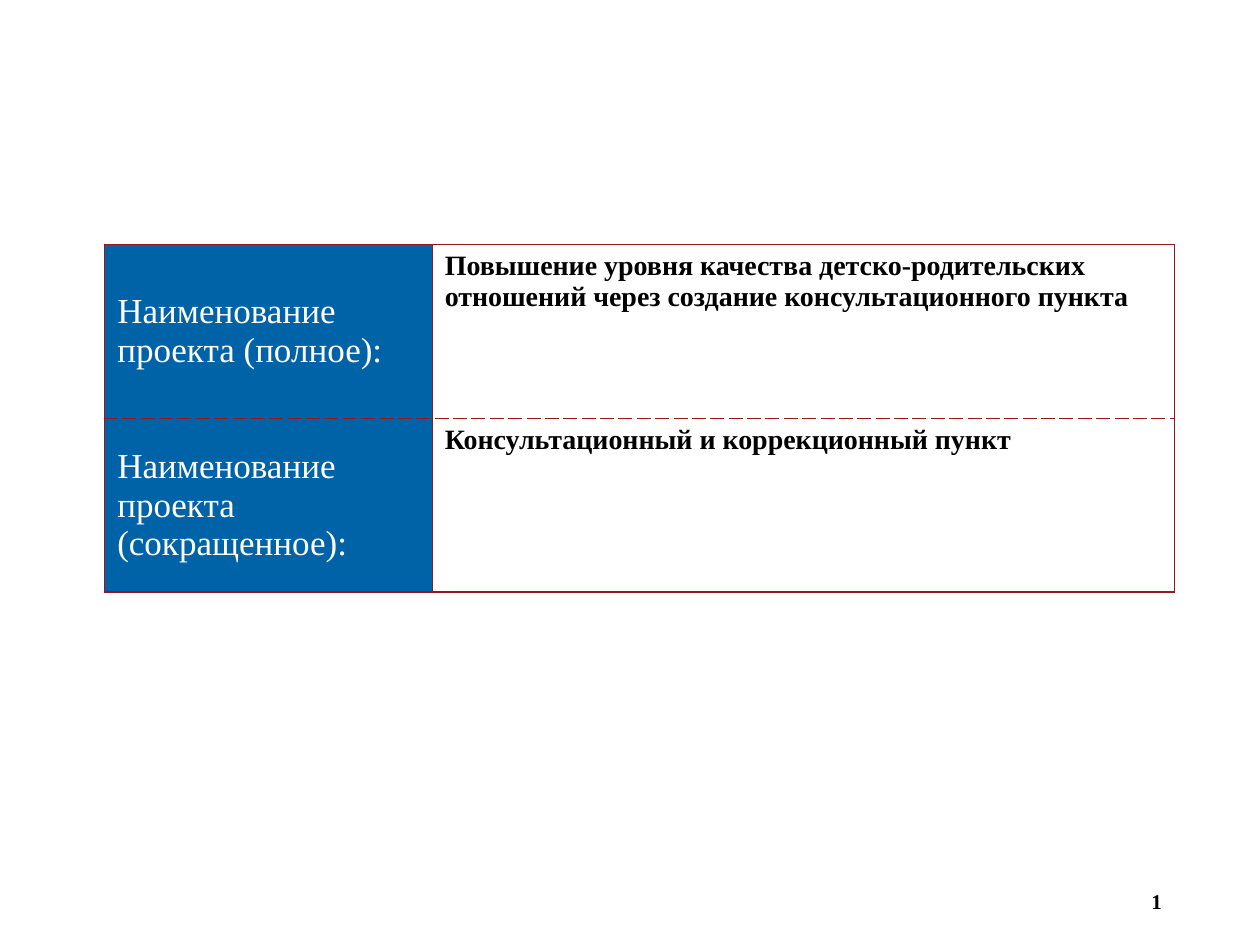
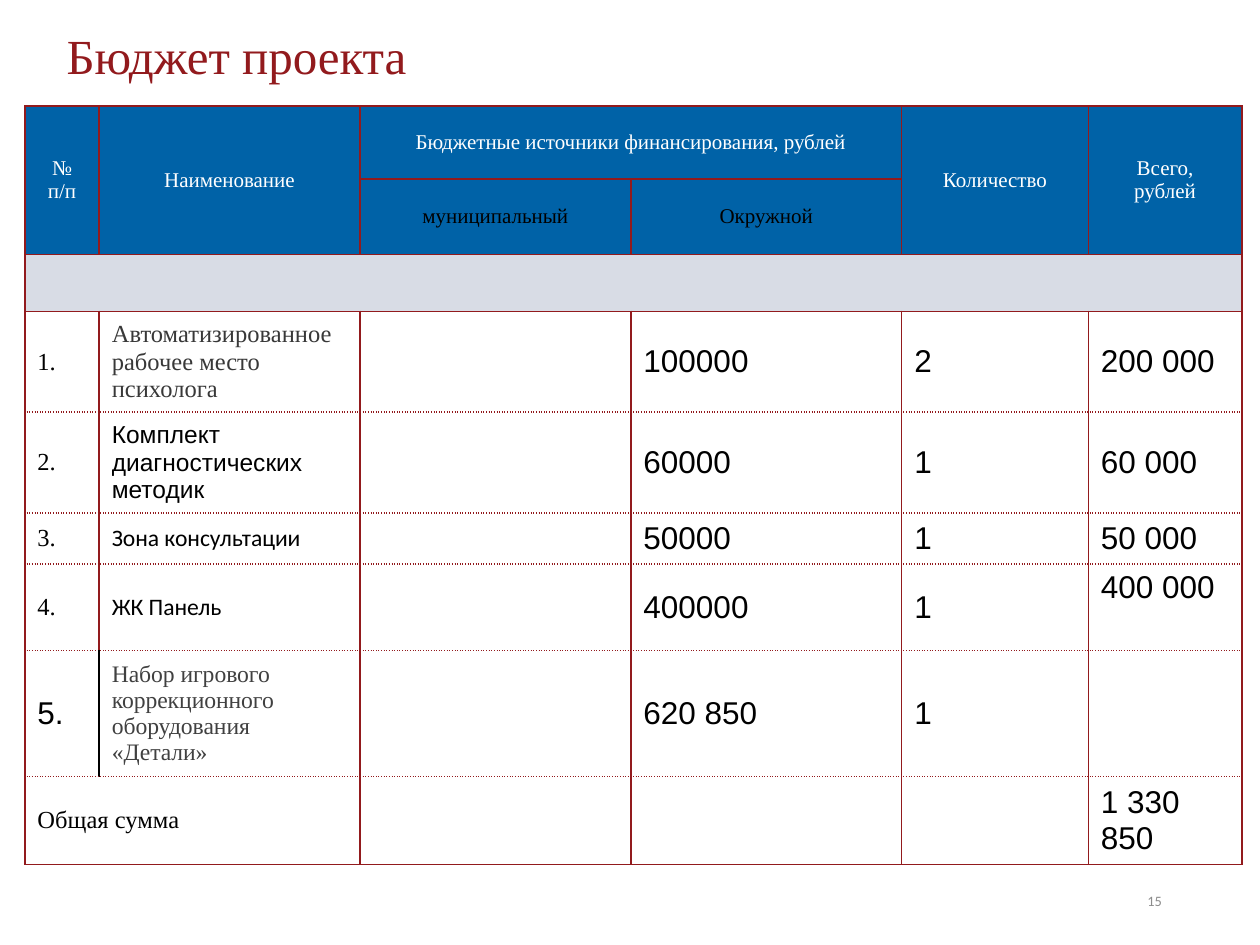
"""Build two project slides: the project names and the project budget."""
import pptx
import pptx.dml.color
import pptx.enum.text
import pptx.oxml
import pptx.oxml.ns
import pptx.util

Pt = pptx.util.Pt
ALIGN = pptx.enum.text.PP_ALIGN
ANCHOR = pptx.enum.text.MSO_ANCHOR
COLORS = {
    "blue": "0062A7", "red": "921A1D", "white": "FFFFFF", "black": "000000",
    "band": "D8DCE5", "dark": "383838", "charcoal": "404040", "gray": "8C8C8C",
}
SERIF, SANS, CALIBRI = "Times New Roman", "Arial", "Calibri"


def write_text(frame, text, font=SERIF, size=18, color="black", bold=False, align=ALIGN.LEFT, spacing=0):
    frame.word_wrap = True
    frame.text = text
    for paragraph in frame.paragraphs:
        paragraph.alignment = align
        paragraph.space_before = paragraph.space_after = Pt(spacing)
        paragraph.font.name = font
        paragraph.font.size = Pt(size)
        paragraph.font.bold = bold
        paragraph.font.color.rgb = pptx.dml.color.RGBColor.from_string(COLORS[color])


def style_cell(cell, fill, top, bottom, left_color="red", right_color="red"):
    cell.fill.solid()
    cell.fill.fore_color.rgb = pptx.dml.color.RGBColor.from_string(COLORS[fill])
    properties = cell._tc.get_or_add_tcPr()
    borders = [("L", left_color, "solid"), ("R", right_color, "solid"), ("T", "red", top), ("B", "red", bottom)]
    for index, (side, color, dash) in enumerate(borders):
        properties.insert(index, pptx.oxml.parse_xml(
            f'<a:ln{side} {pptx.oxml.ns.nsdecls("a")} w="12700"><a:solidFill><a:srgbClr val="{COLORS[color]}"/>'
            f'</a:solidFill><a:prstDash val="{dash}"/></a:ln{side}>'))


presentation = pptx.Presentation()
presentation.slide_width, presentation.slide_height = Pt(720), Pt(540)
page_numbers = [
    ("1", {"size": 12, "bold": True}),
    ("15", {"font": CALIBRI, "size": 8.2, "color": "gray"}),
]
for number, style in page_numbers:
    slide = presentation.slides.add_slide(presentation.slide_layouts[6])
    frame = slide.shapes.add_textbox(Pt(509), Pt(500.4), Pt(162), Pt(28.8)).text_frame
    frame.vertical_anchor = ANCHOR.MIDDLE
    write_text(frame, number, align=ALIGN.RIGHT, **style)
names_slide, budget_slide = presentation.slides

names = [
    ("Наименование проекта (полное):",
     "Повышение уровня качества детско-родительских отношений через создание консультационного пункта"),
    ("Наименование проекта (сокращенное):", "Консультационный и коррекционный пункт"),
]
names_table = names_slide.shapes.add_table(2, 2, Pt(59.8), Pt(139.7), Pt(611.3), Pt(198.7)).table
for column, width in zip(names_table.columns, (187.2, 424.1)):
    column.width = Pt(width)
name_lines = ["solid", "sysDash", "solid"]
for row, (label, name) in enumerate(names):
    label_cell, name_cell = names_table.cell(row, 0), names_table.cell(row, 1)
    write_text(label_cell.text_frame, label, size=20, color="white", spacing=12)
    label_cell.vertical_anchor = ANCHOR.MIDDLE
    write_text(name_cell.text_frame, name, size=16, bold=True)
    style_cell(label_cell, "blue", name_lines[row], name_lines[row + 1])
    style_cell(name_cell, "white", name_lines[row], name_lines[row + 1])

title_frame = budget_slide.shapes.add_textbox(Pt(31), Pt(-2.2), Pt(306.7), Pt(71.3)).text_frame
title_frame.vertical_anchor = ANCHOR.MIDDLE
write_text(title_frame, "Бюджет проекта", size=28, color="red")
title_frame.paragraphs[0].line_spacing = 0.9

column_widths = [42.5, 149, 154.8, 154.8, 106.6, 87.8]
row_heights = [41.8, 43.2, 32.4, 53.7, 54.3, 29.1, 49.4, 66.9, 47.3]
budget_rows = [
    ["№\nп/п", "Наименование", "Бюджетные источники финансирования, рублей", "", "Количество", "Всего,\nрублей"],
    ["", "", "муниципальный", "Окружной", "", ""],
    [""] * 6,
    ["1.", "Автоматизированное рабочее место психолога", "", "100000", "2", "200 000"],
    ["2.", "Комплект диагностических методик", "", "60000", "1", "60 000"],
    ["3.", "Зона консультации", "", "50000", "1", "50 000"],
    ["4.", "ЖК Панель", "", "400000", "1", "400 000"],
    ["5.", "Набор игрового коррекционного оборудования «Детали»", "", "620 850", "1", ""],
    ["Общая сумма", "", "", "", "", "1 330 850"],
]
text_styles = {
    (3, 1): {"size": 14, "color": "dark"},
    (4, 1): {"font": SANS, "size": 14},
    (5, 1): {"font": CALIBRI, "size": 13.5},
    (6, 1): {"font": CALIBRI, "size": 13.5},
    (7, 0): {"font": SANS},
    (7, 1): {"size": 13.5, "color": "charcoal"},
}
budget_lines = ["solid"] * 4 + ["sysDot"] * 5 + ["solid"]
row_fills = ["blue", "blue", "band"] + ["white"] * 6
budget_table = budget_slide.shapes.add_table(
    9, 6, Pt(14.2), Pt(60.5), Pt(sum(column_widths)), Pt(sum(row_heights))).table
for column, width in zip(budget_table.columns, column_widths):
    column.width = Pt(width)
for table_row, height in zip(budget_table.rows, row_heights):
    table_row.height = Pt(height)
for row, texts in enumerate(budget_rows):
    for column, text in enumerate(texts):
        cell = budget_table.cell(row, column)
        if row < 2:
            style = {"size": 12, "color": "black" if row else "white", "align": ALIGN.CENTER}
        elif column == 0:
            style = {"size": 14}
        else:
            style = {"font": SANS}
        write_text(cell.text_frame, text, **text_styles.get((row, column), style))
        cell.vertical_anchor = ANCHOR.TOP if (row, column) == (6, 5) else ANCHOR.MIDDLE
        style_cell(cell, row_fills[row], budget_lines[row], budget_lines[row + 1],
                   left_color="black" if (row, column) == (7, 1) else "red",
                   right_color="black" if (row, column) == (7, 0) else "red")
merges = [((0, column), (1, column)) for column in (0, 1, 4, 5)]
merges += [((0, 2), (0, 3)), ((2, 0), (2, 5)), ((8, 0), (8, 1))]
for first, last in merges:
    budget_table.cell(*first).merge(budget_table.cell(*last))

presentation.save("out.pptx")
